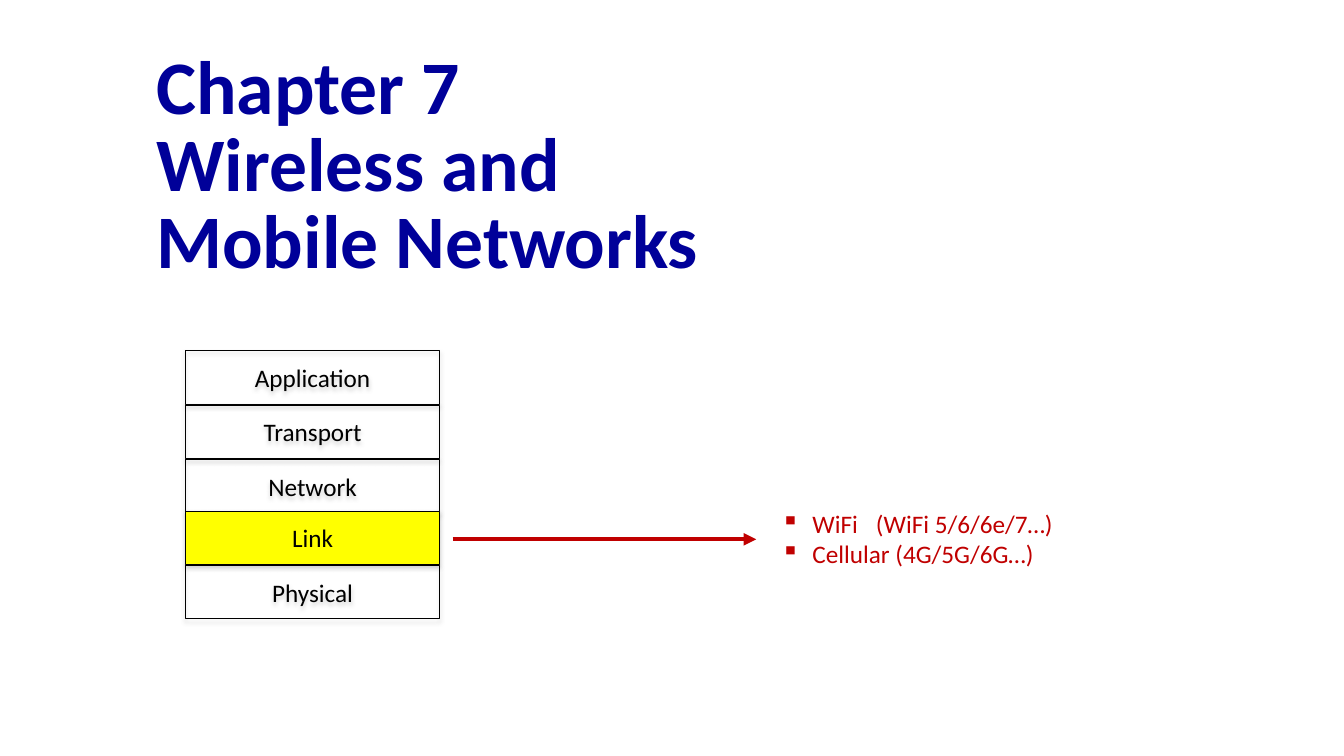
from lxml import etree
from pptx import Presentation
from pptx.dml.color import RGBColor
from pptx.enum.shapes import MSO_CONNECTOR, MSO_SHAPE
from pptx.enum.text import MSO_ANCHOR, MSO_AUTO_SIZE, PP_ALIGN
from pptx.oxml.ns import qn
from pptx.util import Inches, Pt

RECTANGLE = MSO_SHAPE.RECTANGLE
STRAIGHT = MSO_CONNECTOR.STRAIGHT
MIDDLE = MSO_ANCHOR.MIDDLE
LEFT, CENTER = PP_ALIGN.LEFT, PP_ALIGN.CENTER
NO_FIT, GROW = MSO_AUTO_SIZE.NONE, MSO_AUTO_SIZE.SHAPE_TO_FIT_TEXT

NAVY = RGBColor(0x00, 0x00, 0x99)
BLACK = RGBColor(0x00, 0x00, 0x00)
YELLOW = RGBColor(0xFF, 0xFF, 0x00)
RED = RGBColor(0xC0, 0x00, 0x00)


class ChapterSlide:
    font_name = "Calibri"
    body_size = 18

    def __init__(self, prs):
        self.slide = prs.slides.add_slide(prs.slide_layouts[5])

    def style(self, paragraph, size, color, bold=False):
        for run in paragraph.runs:
            font = run.font
            font.name, font.size, font.bold = self.font_name, Pt(size), bold
            font.color.rgb = color

    def title(self, text, left, top, width, height):
        title = self.slide.shapes.title
        title.left, title.top = Inches(left), Inches(top)
        title.width, title.height = Inches(width), Inches(height)
        frame = title.text_frame
        frame.text = text
        frame.auto_size = NO_FIT
        frame.vertical_anchor = MIDDLE
        for paragraph in frame.paragraphs:
            paragraph.alignment = LEFT
            paragraph.line_spacing = 0.85
            self.style(paragraph, 54, NAVY, bold=True)

    def layer(self, text, left, top, width, height, fill=None):
        layer = self.slide.shapes.add_shape(
            RECTANGLE, Inches(left), Inches(top), Inches(width), Inches(height))
        if fill is None:
            layer.fill.background()
        else:
            layer.fill.solid()
            layer.fill.fore_color.rgb = fill
        layer.line.color.rgb = BLACK
        layer.line.width = Pt(0.75)
        self.soft_shadow(layer)
        frame = layer.text_frame
        frame.text = text
        frame.vertical_anchor = MIDDLE
        frame.paragraphs[0].alignment = CENTER
        self.style(frame.paragraphs[0], self.body_size, BLACK)

    def soft_shadow(self, shape):
        shape.shadow.inherit = False
        effects = shape._element.spPr.find(qn("a:effectLst"))
        shadow = etree.SubElement(
            effects, qn("a:outerShdw"), blurRad=str(Pt(3.1)), dist=str(Pt(1.8)),
            dir=str(90 * 60000), rotWithShape="0")
        color = etree.SubElement(shadow, qn("a:srgbClr"), val="808080")
        etree.SubElement(color, qn("a:alpha"), val="35000")

    def arrow(self, start, end, y):
        arrow = self.slide.shapes.add_connector(
            STRAIGHT, Inches(start), Inches(y), Inches(end), Inches(y))
        arrow.line.color.rgb = RED
        arrow.line.width = Pt(3)
        etree.SubElement(arrow.line._get_or_add_ln(), qn("a:tailEnd"), type="triangle")
        etree.SubElement(arrow._element.spPr, qn("a:effectLst"))

    def bullets(self, items, left, top, width, height, tab):
        box = self.slide.shapes.add_textbox(
            Inches(left), Inches(top), Inches(width), Inches(height))
        frame = box.text_frame
        frame.word_wrap = True
        frame.auto_size = GROW
        frame.text = "\n".join(items)
        indent = Inches(0.31)
        for paragraph in frame.paragraphs:
            props = paragraph._p.get_or_add_pPr()
            props.set("marL", str(indent))
            props.set("indent", str(-indent))
            etree.SubElement(props, qn("a:buChar"), char="▪")
            tabs = etree.SubElement(props, qn("a:tabLst"))
            etree.SubElement(tabs, qn("a:tab"), pos=str(Inches(tab)), algn="l")
            self.style(paragraph, self.body_size, RED)


def main():
    prs = Presentation()
    prs.slide_width, prs.slide_height = Inches(13.33), Inches(7.5)
    chapter = ChapterSlide(prs)

    # Chapter heading
    chapter.title("Chapter 7\vWireless and\nMobile Networks", 1.45, 0.61, 10.44, 2.12)

    # Protocol stack, with the link layer highlighted
    layers = [("Application", 3.48, None), ("Transport", 4.02, None),
              ("Network", 4.56, None), ("Link", 5.07, YELLOW),
              ("Physical", 5.61, None)]
    for name, top, fill in layers:
        chapter.layer(name, 1.84, top, 2.52, 0.53, fill)

    # Link-layer technologies
    chapter.arrow(4.49, 7.5, 5.35)
    chapter.bullets(["WiFi\t(WiFi 5/6/6e/7…)", "Cellular (4G/5G/6G…)"],
                    7.65, 4.99, 4.24, 0.71, tab=0.94)

    prs.save("out.pptx")


if __name__ == "__main__":
    main()
